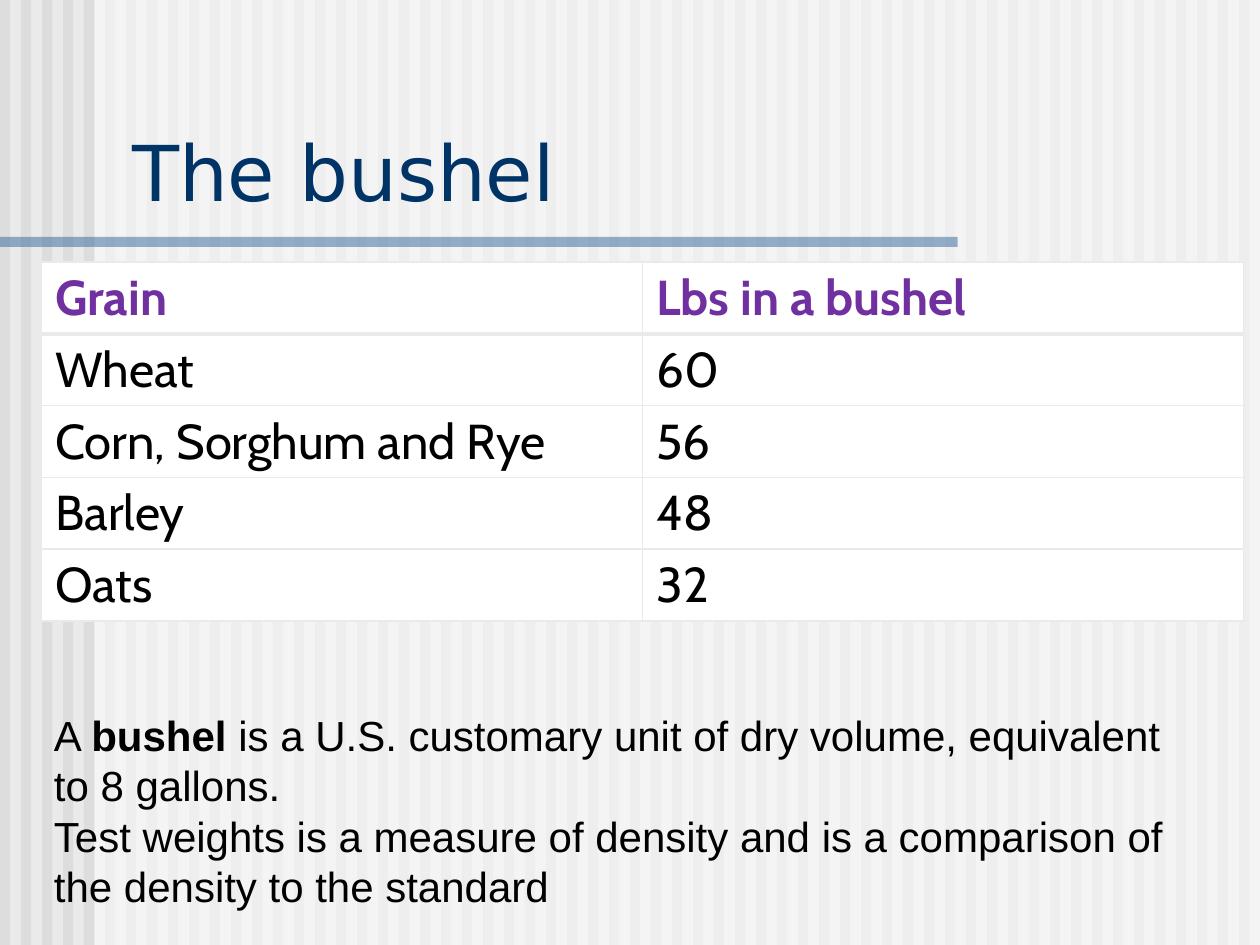
import pptx
import pptx.util
import pptx.dml.color
import pptx.enum.shapes
import pptx.enum.text
import pptx.oxml.ns
from lxml import etree

Inches, Pt = pptx.util.Inches, pptx.util.Pt

# Content
TITLE = "The bushel"
ROWS = [
    ("Grain", "Lbs in a bushel"),
    ("Wheat", "60"),
    ("Corn, Sorghum and Rye", "56"),
    ("Barley", "48"),
    ("Oats", "32"),
]
# Each paragraph is a list of (text, bold) runs
NOTES = [
    [("A ", False), ("bushel", True),
     (" is a U.S. customary unit of dry volume, equivalent to 8 gallons.", False)],
    [("Test weights is a measure of density and is a comparison of "
      "the density to the standard", False)],
]
GRID = "EAEAEA"
STRIPES = 60
COL_WIDTH, ROW_HEIGHT = 4.77, 0.57


def rgb(color):
    return pptx.dml.color.RGBColor.from_string(color)


def sub(parent, tag, **attrs):
    return etree.SubElement(parent, pptx.oxml.ns.qn(tag), **attrs)


def add_rect(slide, x, y, w, h, color, alpha=None):
    sp = slide.shapes.add_shape(pptx.enum.shapes.MSO_SHAPE.RECTANGLE,
                                Inches(x), Inches(y), Inches(w), Inches(h))
    sp.shadow.inherit = False
    sp.fill.solid()
    sp.fill.fore_color.rgb = rgb(color)
    sp.line.fill.background()
    if alpha is not None:
        clr = sp.fill._xPr.find(".//" + pptx.oxml.ns.qn("a:srgbClr"))
        sub(clr, "a:alpha", val=str(alpha * 1000))


def add_text(slide, x, y, w, h):
    tf = slide.shapes.add_textbox(Inches(x), Inches(y), Inches(w), Inches(h)).text_frame
    tf.word_wrap = True
    return tf


def style(r, font, size, color, bold=False):
    r.font.name, r.font.size, r.font.bold = font, Pt(size), bold
    r.font.color.rgb = rgb(color)


def set_borders(cell, widths):
    tc_pr = cell._tc.get_or_add_tcPr()
    for i, (side, width) in enumerate(widths.items()):
        ln = etree.Element(pptx.oxml.ns.qn("a:" + side), w=str(Pt(width)))
        sub(sub(ln, "a:solidFill"), "a:srgbClr", val=GRID)
        tc_pr.insert(i, ln)


def main():
    prs = pptx.Presentation()
    prs.slide_width, prs.slide_height = Inches(10), Inches(7.5)
    s = prs.slides.add_slide(prs.slide_layouts[6])

    # Striped background, pale veil and title rule
    s.background.fill.solid()
    s.background.fill.fore_color.rgb = rgb(GRID)
    for i in range(STRIPES):
        add_rect(s, i * 10 / STRIPES, 0, 0.08, 7.5, "DDDDDD")
    add_rect(s, 0.75, 0, 9.25, 7.5, "FFFFFF", 50)
    add_rect(s, 0, 1.88, 7.6, 0.08, "336699", 50)

    # Title
    tf = add_text(s, 0.95, 0.93, 8.93, 0.84)
    tf.vertical_anchor = pptx.enum.text.MSO_ANCHOR.BOTTOM
    tf.text = TITLE
    style(tf.paragraphs[0].runs[0], "DejaVu Sans", 44, "003366")

    # Grain table
    table = s.shapes.add_table(len(ROWS), 2, Inches(0.33), Inches(2.08),
                               Inches(2 * COL_WIDTH),
                               Inches(len(ROWS) * ROW_HEIGHT)).table
    for col in table.columns:
        col.width = Inches(COL_WIDTH)
    for i, row in enumerate(ROWS):
        table.rows[i].height = Inches(ROW_HEIGHT)
        header = i == 0
        for j, text in enumerate(row):
            cell = table.cell(i, j)
            cell.margin_left = cell.margin_right = Inches(0.11)
            cell.fill.solid()
            cell.fill.fore_color.rgb = rgb("FFFFFF")
            cell.text = text
            style(cell.text_frame.paragraphs[0].runs[0], "Cabin", 28,
                  "7030A0" if header else "000000", header)
            set_borders(cell, {"lnL": 1, "lnR": 1, "lnT": 3 if i == 1 else 1,
                               "lnB": 3 if header else 1})

    # Explanation
    tf = add_text(s, 0.33, 5.58, 9.25, 1.72)
    for i, runs in enumerate(NOTES):
        p = tf.add_paragraph() if i else tf.paragraphs[0]
        for text, bold in runs:
            r = p.add_run()
            r.text = text
            style(r, "Arial", 24, "000000", bold)

    prs.save("out.pptx")


if __name__ == "__main__":
    main()
